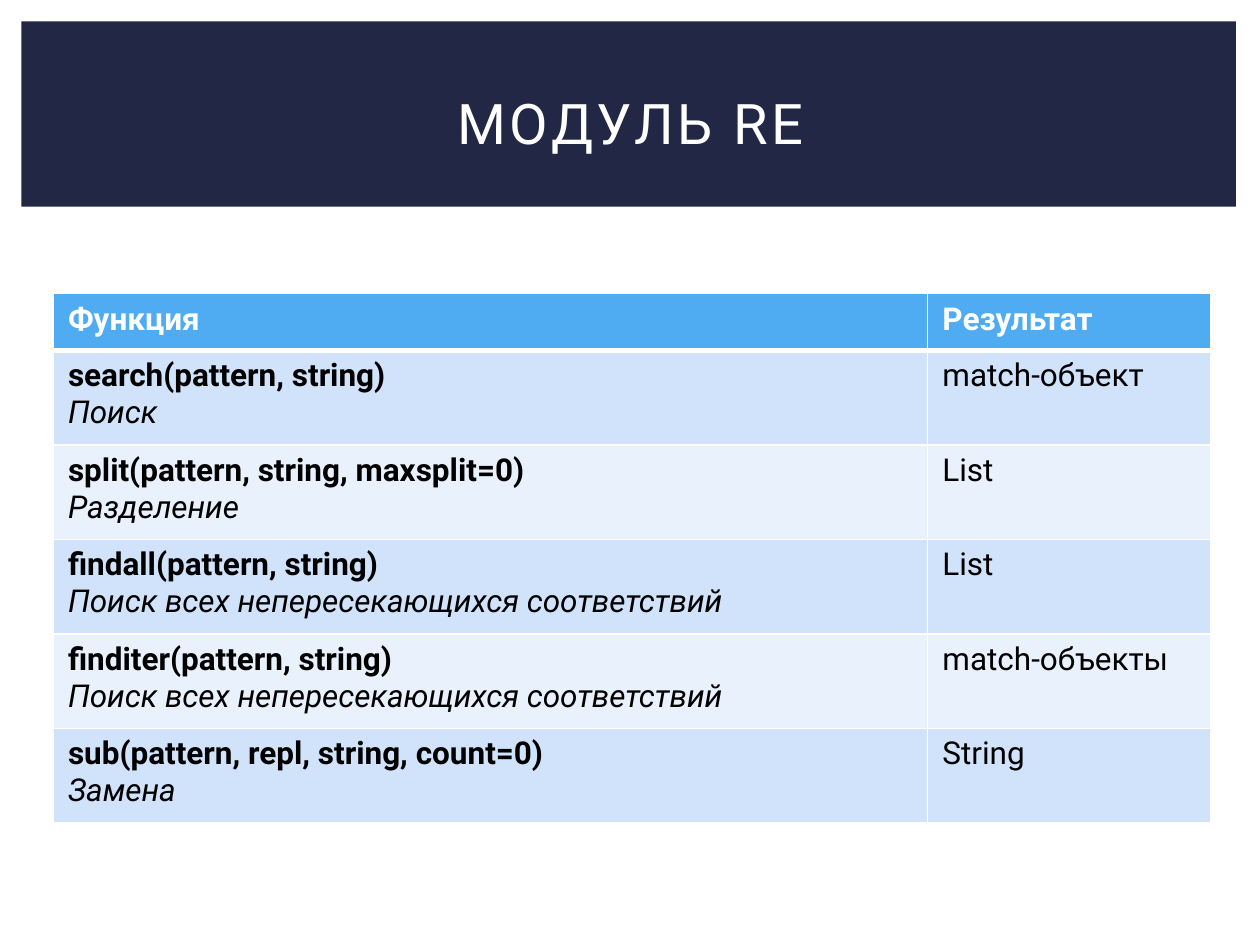
"""Build a slide with a table of the functions of the re module."""
from dataclasses import dataclass

from lxml import etree
from pptx import Presentation
from pptx import util as u
from pptx.dml.color import RGBColor
from pptx.enum import shapes, text
from pptx.oxml.ns import qn


@dataclass(frozen=True)
class Theme:
    font: str = "Roboto"
    navy: str = "212745"
    blue: str = "4FACF3"
    bands: tuple = ("D0E3FA", "E9F1FD")
    white: str = "FFFFFF"
    black: str = "000000"
    title_size: int = 32
    body_size: int = 18


theme = Theme()


def add_run(p, words, size, color, bold=False, italic=False):
    r = p.add_run()
    r.text = words
    r.font.name = theme.font
    r.font.size = u.Pt(size)
    r.font.bold = bold
    r.font.italic = italic
    r.font.color.rgb = RGBColor.from_string(color)
    return r


def add_border(cell, side, points):
    ln = etree.SubElement(cell._tc.get_or_add_tcPr(), qn(f"a:ln{side}"), w=str(u.Pt(points)))
    fill = etree.SubElement(ln, qn("a:solidFill"))
    etree.SubElement(fill, qn("a:srgbClr"), val=theme.white)


prs = Presentation()
prs.slide_width, prs.slide_height = u.Inches(10), u.Inches(7.5)
s = prs.slides.add_slide(prs.slide_layouts[6])

band = s.shapes.add_shape(
    shapes.MSO_SHAPE.RECTANGLE, u.Inches(0.17), u.Inches(0.17), u.Inches(9.64), u.Inches(1.47)
)
band.shadow.inherit = False
band.fill.solid()
band.fill.fore_color.rgb = RGBColor.from_string(theme.navy)
band.line.fill.background()

title = s.shapes.add_textbox(u.Inches(0.42), u.Inches(0.39), u.Inches(9.17), u.Inches(1.15))
tf = title.text_frame
tf.word_wrap = True
tf.vertical_anchor = text.MSO_ANCHOR.MIDDLE
p = tf.paragraphs[0]
p.alignment = text.PP_ALIGN.CENTER
r = add_run(p, "МОДУЛЬ RE", theme.title_size, theme.white)
r.font._element.set("spc", "200")

functions = [
    ("search(pattern, string)", "Поиск", "match-объект"),
    ("split(pattern, string, maxsplit=0)", "Разделение", "List"),
    ("findall(pattern, string)", "Поиск всех непересекающихся соответствий", "List"),
    ("finditer(pattern, string)", "Поиск всех непересекающихся соответствий", "match-объекты"),
    ("sub(pattern, repl, string, count=0)", "Замена", "String"),
]
rows = [[[("Функция", True, False)], [("Результат", True, False)]]]
for call, purpose, result in functions:
    rows.append([[(call, True, False), (purpose, False, True)], [(result, False, False)]])

table = s.shapes.add_table(
    len(rows), 2, u.Inches(0.42), u.Inches(2.33), u.Inches(9.19), u.Inches(4.14)
).table
for column, width in zip(table.columns, (6.94, 2.25)):
    column.width = u.Inches(width)

for i, row in enumerate(rows):
    header = i == 0
    table.rows[i].height = u.Inches(0.44 if header else 0.74)
    for j, lines in enumerate(row):
        cell = table.cell(i, j)
        cell.margin_left = cell.margin_right = u.Inches(0.12)
        cell.margin_top, cell.margin_bottom = u.Inches(0.06), u.Inches(0.09)
        for side, points in (("L", 1), ("R", 1), ("T", 3 if i == 1 else 1), ("B", 3 if header else 1)):
            add_border(cell, side, points)
        cell.fill.solid()
        cell.fill.fore_color.rgb = RGBColor.from_string(
            theme.blue if header else theme.bands[(i - 1) % 2]
        )
        tf = cell.text_frame
        for k, (words, bold, italic) in enumerate(lines):
            p = tf.add_paragraph() if k else tf.paragraphs[0]
            add_run(p, words, theme.body_size, theme.white if header else theme.black, bold, italic)

prs.save("out.pptx")
